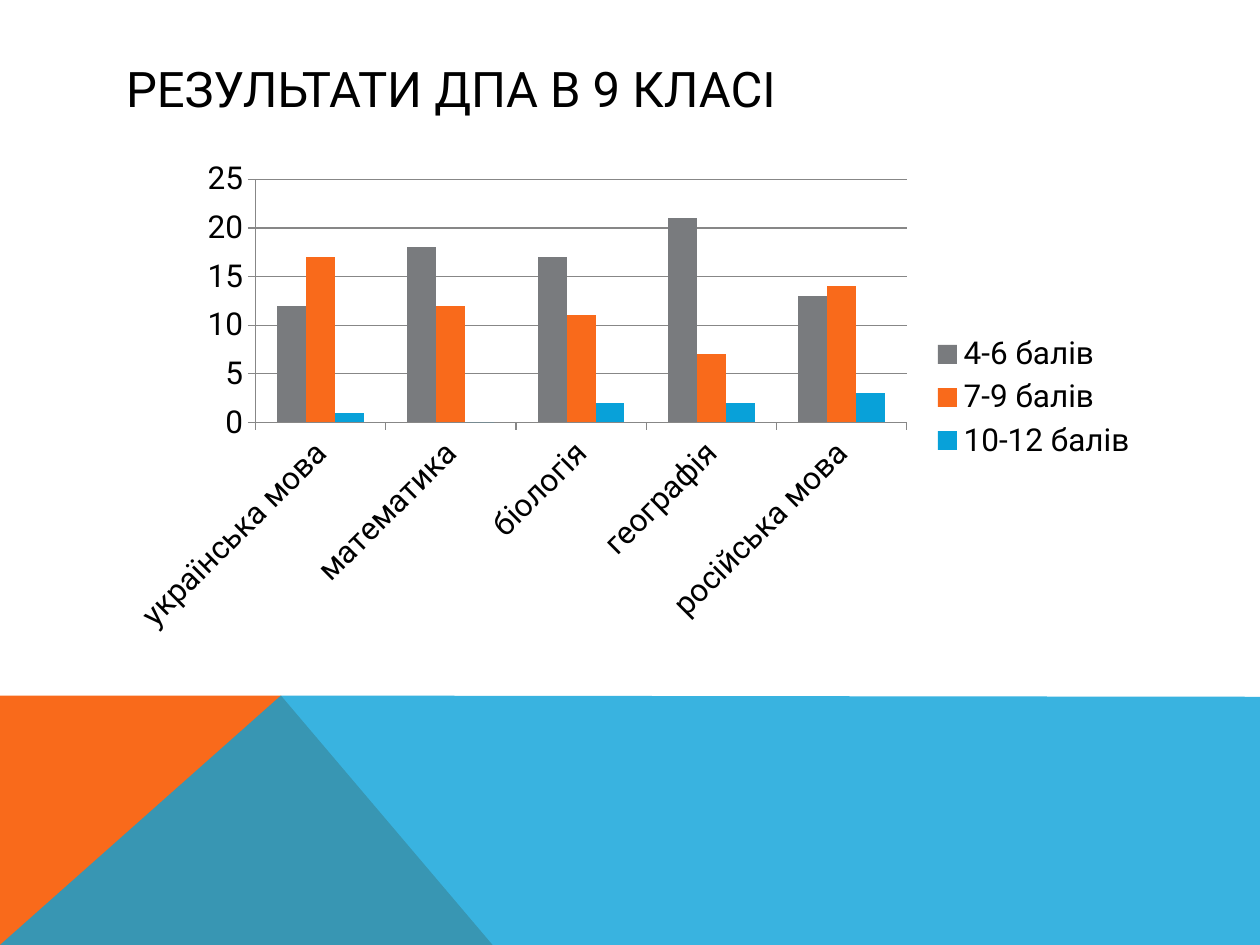
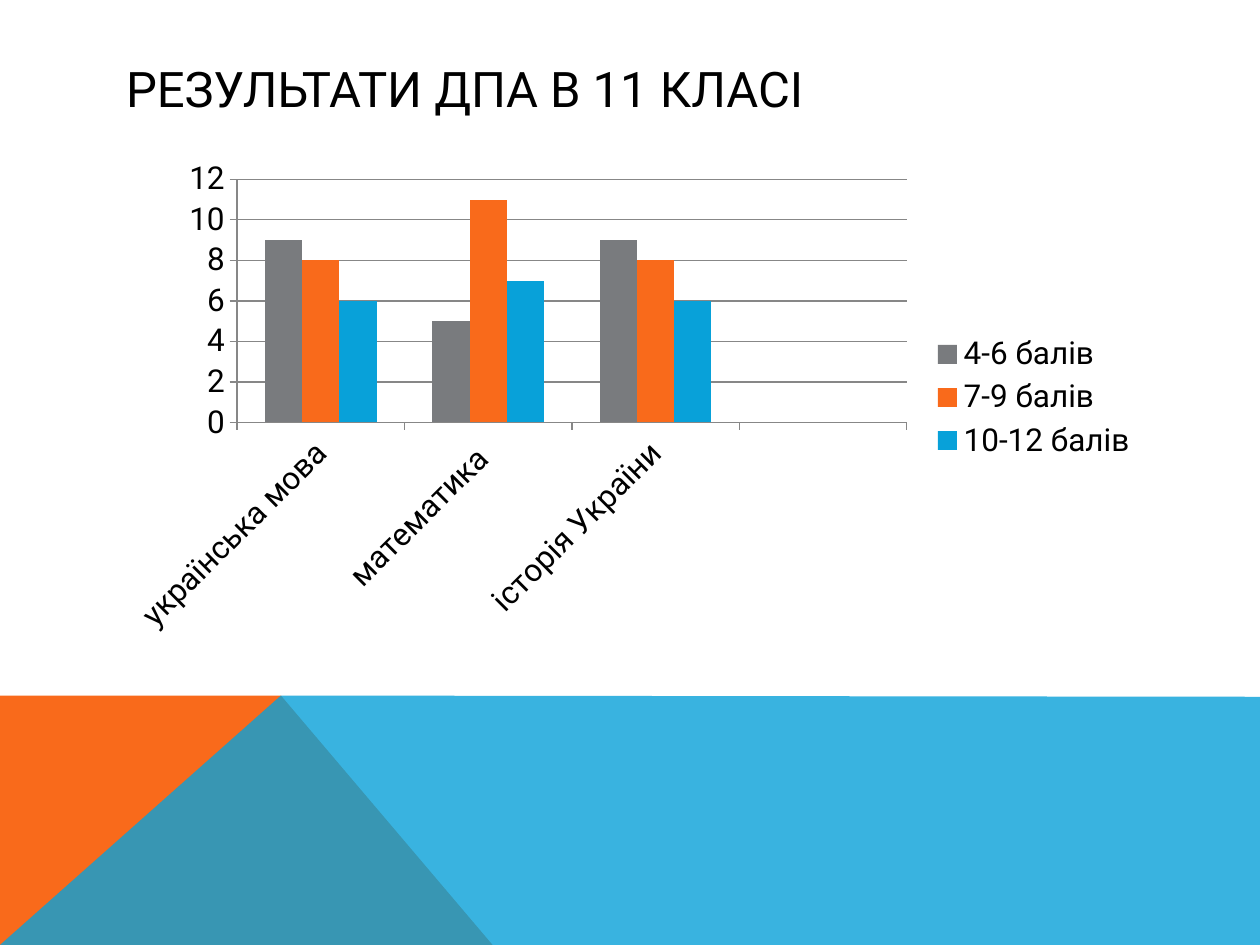
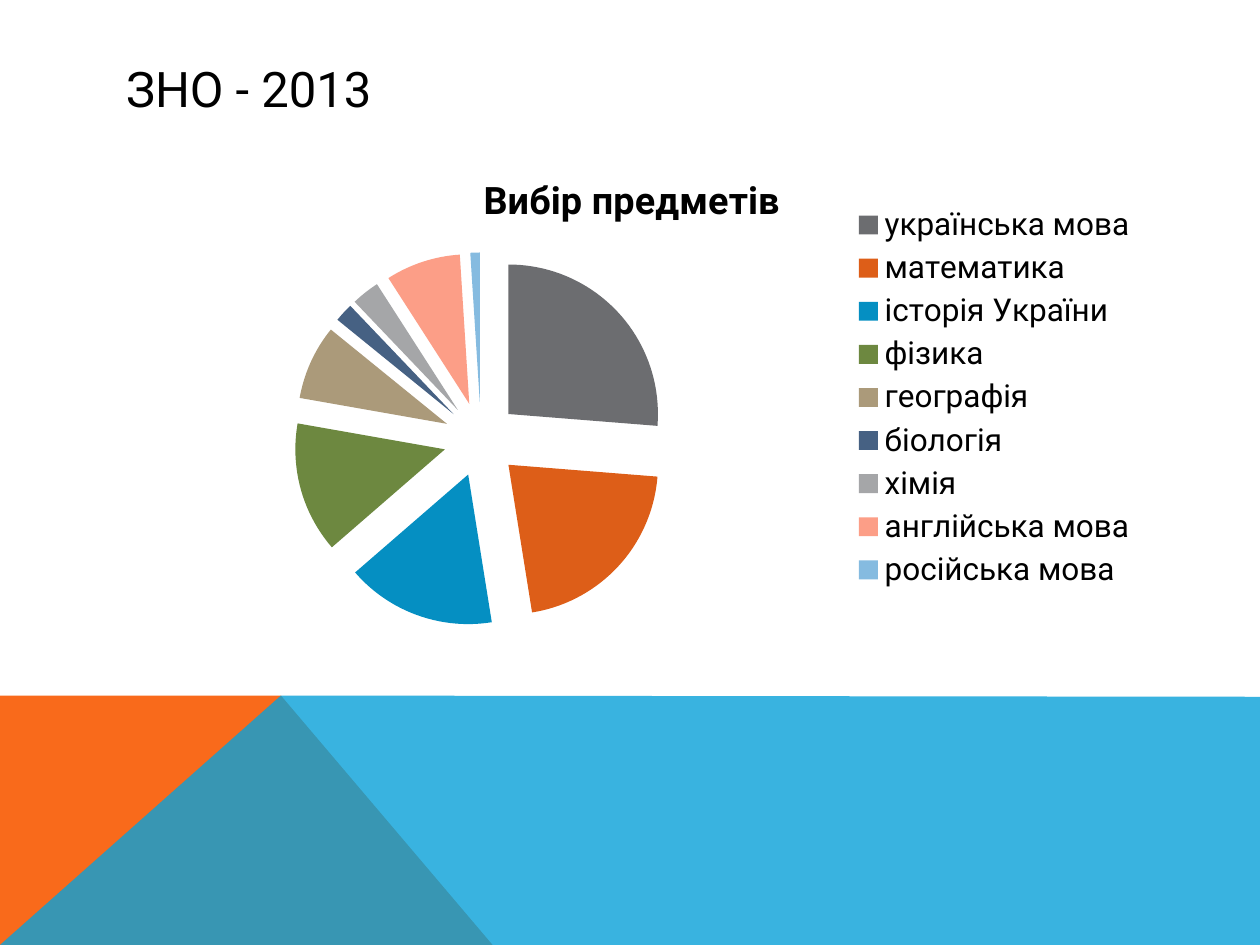
from typing import NamedTuple

import pptx
import pptx.chart.data
import pptx.dml.color
import pptx.enum.chart
import pptx.enum.text
import pptx.oxml.xmlchemy
import pptx.util

Inches = pptx.util.Inches
Pt = pptx.util.Pt
RGBColor = pptx.dml.color.RGBColor
ChartType = pptx.enum.chart.XL_CHART_TYPE

BLACK = RGBColor(0x00, 0x00, 0x00)
GRAY = RGBColor(0x79, 0x7B, 0x7E)
ORANGE = RGBColor(0xF9, 0x6A, 0x1B)
BLUE = RGBColor(0x08, 0xA1, 0xD9)
AXIS_GRAY = RGBColor(0x87, 0x87, 0x87)
BAR_COLORS = (GRAY, ORANGE, BLUE)
PIE_COLORS = (
    RGBColor(0x6C, 0x6D, 0x70), RGBColor(0xDD, 0x5E, 0x18), RGBColor(0x05, 0x8F, 0xC2),
    RGBColor(0x6D, 0x88, 0x40), RGBColor(0xAB, 0x9A, 0x7A), RGBColor(0x46, 0x61, 0x83),
    RGBColor(0xA5, 0xA6, 0xA8), RGBColor(0xFC, 0x9E, 0x87), RGBColor(0x85, 0xBB, 0xE0),
)

FONT = "Roboto"
TITLE_FORMAT = {"name": FONT, "size": Pt(28), "bold": False}
CHART_FORMAT = {"name": FONT, "size": Pt(18), "bold": False}
CHART_TITLE_FORMAT = {"name": FONT, "size": Pt(21.6), "bold": True}

TITLE_BOX = {"left": Inches(0.9), "top": Inches(0.4),
             "width": Inches(8.22), "height": Inches(0.6)}
CHART_BOX = (Inches(0.9), Inches(1.2), Inches(8.23), Inches(3.91))

LABEL_ANGLE = -45
EXPLOSION = 25
GRADES = ("4-6 балів", "7-9 балів", "10-12 балів")


class Band(NamedTuple):
    points: tuple[tuple[float, float], ...]
    color: RGBColor
    opacity: int = 100


class BarSlide(NamedTuple):
    title: str
    subjects: tuple[str, ...]
    values: tuple[tuple[int | None, ...], ...]


BANDS = (
    Band(((0, 7.5), (0, 5.52), (2.23, 5.52), (3.91, 7.5)), ORANGE),
    Band(((0, 7.5), (2.23, 5.52), (10, 5.53), (10, 7.5)), BLUE, 80),
)
BAR_SLIDES = (
    BarSlide(
        "РЕЗУЛЬТАТИ ДПА В 9 КЛАСІ",
        ("українська мова", "математика", "біологія", "географія", "російська мова"),
        ((12, 18, 17, 21, 13), (17, 12, 11, 7, 14), (1, 0, 2, 2, 3)),
    ),
    BarSlide(
        "РЕЗУЛЬТАТИ ДПА В 11 КЛАСІ",
        ("українська мова", "математика ", "історія України", ""),
        ((9, 5, 9, None), (8, 11, 8, None), (6, 7, 6, None)),
    ),
)
EXAM_CHOICES = {
    "українська мова": 26, "математика": 21, "історія України": 16,
    "фізика": 14, "географія": 8, "біологія": 2, "хімія": 3,
    "англійська мова": 8, "російська мова": 1,
}


def set_font(font, values: dict) -> None:
    for name, value in values.items():
        setattr(font, name, value)
    font.color.rgb = BLACK


def paint(fill, color: RGBColor) -> None:
    fill.solid()
    fill.fore_color.rgb = color


def value_element(tag: str, value: int):
    """Make an XML element that carries only a val attribute."""
    element = pptx.oxml.xmlchemy.OxmlElement(tag)
    element.set("val", str(value))
    return element


def add_bands(s, layout) -> None:
    """Draw the bands on a slide and move them to its layout, behind the placeholders."""
    for position, band in enumerate(BANDS, start=2):
        points = [(Inches(x), Inches(y)) for x, y in band.points]
        builder = s.shapes.build_freeform(*points[0])
        builder.add_line_segments(points[1:], close=True)
        sp = builder.convert_to_shape()
        sp.shadow.inherit = False
        sp.line.fill.background()
        paint(sp.fill, band.color)
        if band.opacity < 100:
            color = sp.element.xpath("./p:spPr/a:solidFill/a:srgbClr")[0]
            color.append(value_element("a:alpha", band.opacity * 1000))
        layout.shapes.element.insert(position, sp.element)


def add_titled_slide(prs, layout, title: str):
    s = prs.slides.add_slide(layout)
    sp = s.shapes.title
    for name, value in TITLE_BOX.items():
        setattr(sp, name, value)
    tf = sp.text_frame
    tf.word_wrap = True
    tf.vertical_anchor = pptx.enum.text.MSO_ANCHOR.MIDDLE
    p = tf.paragraphs[0]
    p.alignment = pptx.enum.text.PP_ALIGN.LEFT
    r = p.add_run()
    r.text = title
    set_font(r.font, TITLE_FORMAT)
    return s


def add_chart(s, kind, data):
    chart = s.shapes.add_chart(kind, *CHART_BOX, data).chart
    set_font(chart.font, CHART_FORMAT)
    chart.has_title = False
    chart.has_legend = True
    chart.legend.position = pptx.enum.chart.XL_LEGEND_POSITION.RIGHT
    chart.legend.include_in_layout = False
    set_font(chart.legend.font, CHART_FORMAT)
    return chart


def style_axes(chart) -> None:
    value_axis, category_axis = chart.value_axis, chart.category_axis
    value_axis.has_major_gridlines = True
    lines = [value_axis.major_gridlines.format.line]
    for axis in (value_axis, category_axis):
        axis.major_tick_mark = pptx.enum.chart.XL_TICK_MARK.OUTSIDE
        axis.minor_tick_mark = pptx.enum.chart.XL_TICK_MARK.NONE
        set_font(axis.tick_labels.font, CHART_FORMAT)
        lines.append(axis.format.line)
    for line in lines:
        line.color.rgb = AXIS_GRAY
        line.width = Pt(0.75)
    body = chart.element.xpath(".//c:catAx/c:txPr/a:bodyPr")[0]
    body.set("rot", str(LABEL_ANGLE * 60000))
    body.set("vert", "horz")


def add_bar_chart(s, content: BarSlide) -> None:
    data = pptx.chart.data.CategoryChartData()
    data.categories = content.subjects
    for grade, values in zip(GRADES, content.values):
        data.add_series(grade, values)
    chart = add_chart(s, ChartType.COLUMN_CLUSTERED, data)
    style_axes(chart)
    plot = chart.plots[0]
    plot.vary_by_categories = False
    plot.gap_width = 150
    for series, color in zip(plot.series, BAR_COLORS):
        paint(series.format.fill, color)


def add_pie_chart(s, title: str, choices: dict[str, int]) -> None:
    data = pptx.chart.data.CategoryChartData()
    data.categories = list(choices)
    data.add_series("Series 1", list(choices.values()))
    chart = add_chart(s, ChartType.PIE, data)
    chart.has_title = True
    r = chart.chart_title.text_frame.paragraphs[0].add_run()
    r.text = title
    set_font(r.font, CHART_TITLE_FORMAT)
    plot = chart.plots[0]
    plot.vary_by_categories = True
    for i, color in enumerate(PIE_COLORS):
        paint(plot.series[0].points[i].format.fill, color)
    first_point = chart.element.xpath(".//c:ser/c:dPt")[0]
    first_point.addprevious(value_element("c:explosion", EXPLOSION))


def main() -> None:
    prs = pptx.Presentation()
    prs.slide_width, prs.slide_height = Inches(10), Inches(7.5)
    layout = prs.slide_layouts.get_by_name("Title Only")
    for content in BAR_SLIDES:
        s = add_titled_slide(prs, layout, content.title)
        add_bar_chart(s, content)
    s = add_titled_slide(prs, layout, "ЗНО - 2013")
    add_pie_chart(s, "Вибір предметів", EXAM_CHOICES)
    add_bands(s, layout)
    prs.save("out.pptx")


if __name__ == "__main__":
    main()
